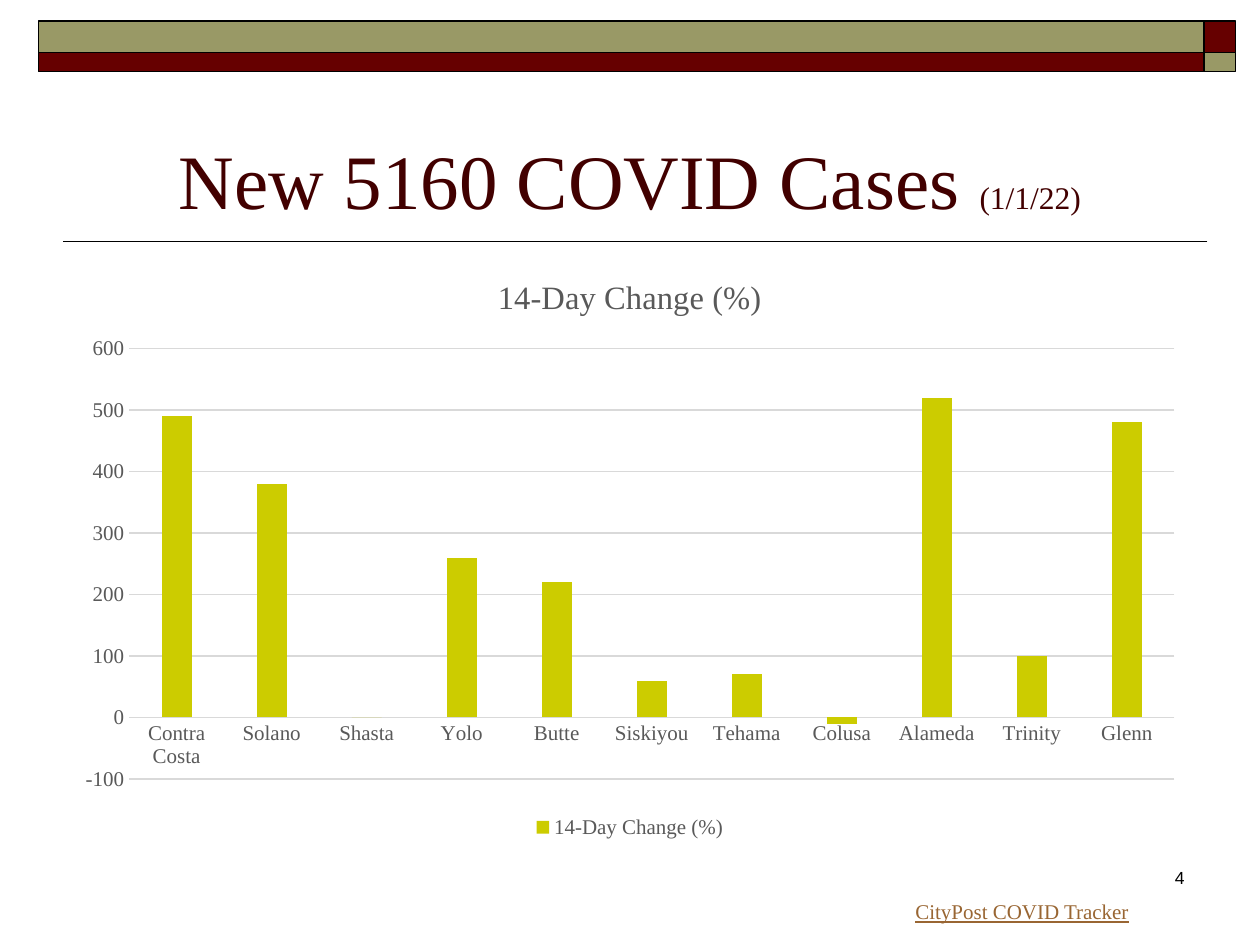
from lxml import etree
from pptx import Presentation
from pptx.chart.data import CategoryChartData
from pptx.dml.color import RGBColor
from pptx.enum.chart import XL_CHART_TYPE, XL_LEGEND_POSITION, XL_TICK_LABEL_POSITION, XL_TICK_MARK
from pptx.enum.shapes import MSO_CONNECTOR, MSO_SHAPE
from pptx.enum.text import MSO_ANCHOR, PP_ALIGN
from pptx.oxml.ns import qn
from pptx.util import Pt

COLUMNS = XL_CHART_TYPE.COLUMN_CLUSTERED
LEGEND_BOTTOM = XL_LEGEND_POSITION.BOTTOM
LABELS_NEXT_TO_AXIS = XL_TICK_LABEL_POSITION.NEXT_TO_AXIS
NO_TICK = XL_TICK_MARK.NONE
STRAIGHT = MSO_CONNECTOR.STRAIGHT
RECTANGLE = MSO_SHAPE.RECTANGLE
TOP, BOTTOM = MSO_ANCHOR.TOP, MSO_ANCHOR.BOTTOM
LEFT, CENTER, RIGHT = PP_ALIGN.LEFT, PP_ALIGN.CENTER, PP_ALIGN.RIGHT

BLACK = RGBColor(0x00, 0x00, 0x00)
MAROON = RGBColor(0x66, 0x00, 0x00)
DARK_MAROON = RGBColor(0x42, 0x00, 0x00)
OLIVE = RGBColor(0x99, 0x99, 0x66)
YELLOW = RGBColor(0xCC, 0xCC, 0x00)
BROWN = RGBColor(0x99, 0x66, 0x33)
GRAY = RGBColor(0x59, 0x59, 0x59)
LIGHT_GRAY = RGBColor(0xD9, 0xD9, 0xD9)

SERIF, SANS = "Times New Roman", "Arial"
MEASURE = "14-Day Change (%)"
CHANGES = {
    "Contra Costa": 490, "Solano": 380, "Shasta": 0, "Yolo": 260,
    "Butte": 220, "Siskiyou": 60, "Tehama": 70, "Colusa": -10,
    "Alameda": 520, "Trinity": 100, "Glenn": 480,
}


def set_font(font, size, color, name=SERIF):
    font.size = Pt(size)
    font.name = name
    font.color.rgb = color


def add_text(box, runs, align, anchor=TOP, wrap=True):
    """Add a text box; each run is (text, size, color, font name, underline)."""
    frame = slide.shapes.add_textbox(*(Pt(length) for length in box)).text_frame
    frame.word_wrap = wrap
    frame.vertical_anchor = anchor
    paragraph = frame.paragraphs[0]
    paragraph.alignment = align
    for text, size, color, name, underline in runs:
        run = paragraph.add_run()
        run.text = text
        set_font(run.font, size, color, name)
        if underline:
            run.font.underline = True


prs = Presentation()
prs.slide_width, prs.slide_height = Pt(720), Pt(540)
slide = prs.slides.add_slide(prs.slide_layouts[6])

# Rule under the title
rule = slide.shapes.add_connector(STRAIGHT, Pt(690), Pt(138), Pt(36), Pt(138))
rule.line.color.rgb = BLACK
rule.line.width = Pt(1)
etree.SubElement(rule._element.spPr, qn("a:effectLst"))

# Header band: two rows, with the colours swapped in the right-hand squares
for top, height, band_color, square_color in (
    (12, 18, OLIVE, MAROON),
    (30, 11, MAROON, OLIVE),
):
    for left, width, color in ((22, 666, band_color), (688, 18, square_color)):
        bar = slide.shapes.add_shape(RECTANGLE, Pt(left), Pt(top), Pt(width), Pt(height))
        bar.shadow.inherit = False
        bar.fill.solid()
        bar.fill.fore_color.rgb = color
        bar.line.color.rgb = BLACK
        bar.line.width = Pt(1)

# Title and slide number
add_text((36, 42, 648, 90), [
    ("New 5160 COVID Cases ", 44, DARK_MAROON, SERIF, False),
    ("(1/1/22)", 18, DARK_MAROON, SERIF, False),
], CENTER, BOTTOM)
add_text((534, 492, 150, 36), [("4", 10, BLACK, SANS, False)], RIGHT)

# Column chart
chart_data = CategoryChartData()
chart_data.categories = list(CHANGES)
chart_data.add_series(MEASURE, list(CHANGES.values()))
chart = slide.shapes.add_chart(COLUMNS, Pt(36), Pt(144), Pt(648), Pt(338), chart_data).chart
set_font(chart.font, 10, BLACK)

chart.has_title = True
title_run = chart.chart_title.text_frame.paragraphs[0].add_run()
title_run.text = MEASURE
set_font(title_run.font, 18.6, GRAY)
title_run.font.bold = False
chart.chart_title.include_in_layout = False

chart.has_legend = True
chart.legend.position = LEGEND_BOTTOM
chart.legend.include_in_layout = False
set_font(chart.legend.font, 12, GRAY)

# Columns
plot = chart.plots[0]
plot.gap_width = 219
plot.overlap = -27
plot.vary_by_categories = False
columns = plot.series[0]
columns.invert_if_negative = False
columns.format.fill.solid()
columns.format.fill.fore_color.rgb = YELLOW

# Axes
for axis in (chart.category_axis, chart.value_axis):
    axis.major_tick_mark = NO_TICK
    axis.minor_tick_mark = NO_TICK
    axis.tick_label_position = LABELS_NEXT_TO_AXIS
    set_font(axis.tick_labels.font, 12, GRAY)
chart.value_axis.minimum_scale = -100
chart.value_axis.maximum_scale = 600
chart.value_axis.major_unit = 100
chart.value_axis.has_major_gridlines = True
chart.value_axis.format.line.fill.background()
for line in (chart.category_axis.format.line, chart.value_axis.major_gridlines.format.line):
    line.color.rgb = LIGHT_GRAY
    line.width = Pt(0.75)

# Source
add_text((516, 510, 143, 22),
         [("CityPost COVID Tracker", 12, BROWN, SERIF, True)], LEFT, wrap=False)

prs.save("out.pptx")
